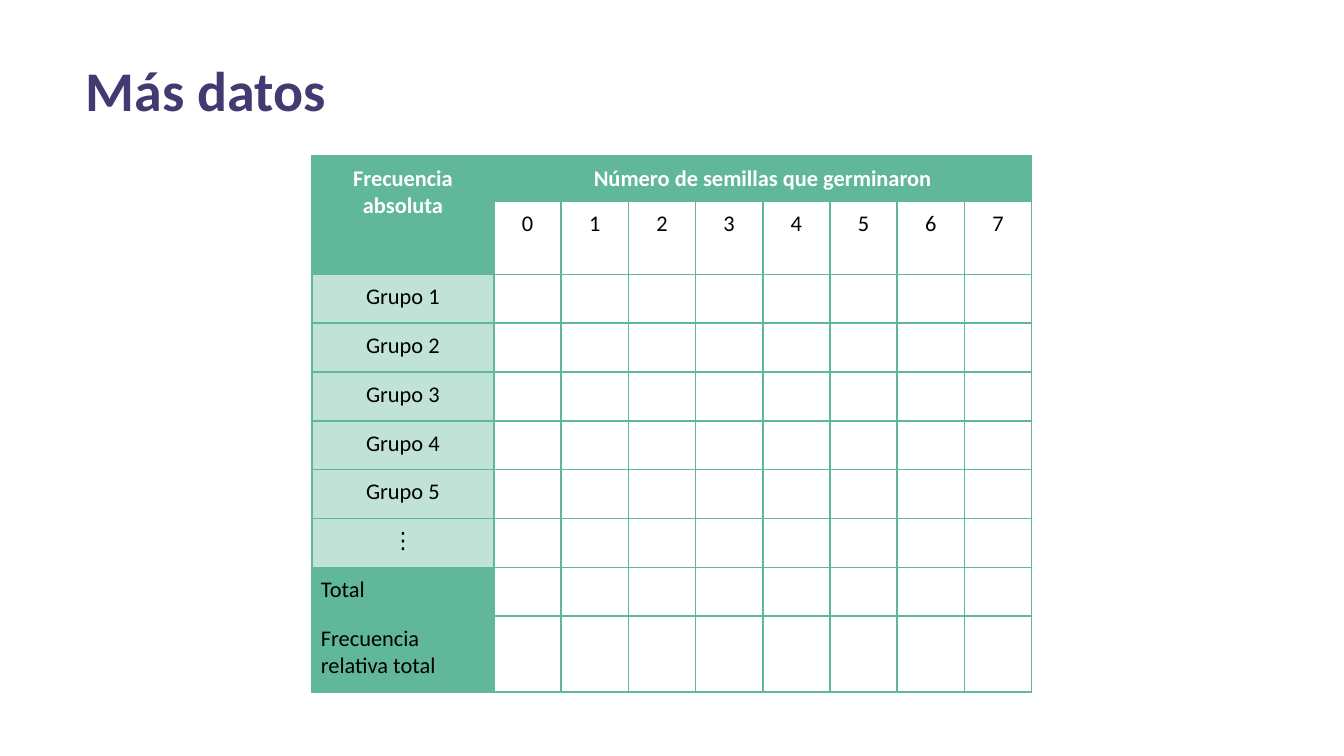
import dataclasses

import lxml.etree
import pptx
import pptx.dml.color
import pptx.enum.text
import pptx.oxml.ns
import pptx.util

EMU_PER_PX = 914400 / 134.4


@dataclasses.dataclass(frozen=True)
class Theme:
    font: str = "Calibri"
    title_size: int = 30
    table_size: int = 12
    title: str = "423B71"
    green: str = "60B799"
    pale_green: str = "C0E2D7"
    white: str = "FFFFFF"
    black: str = "000000"


THEME = Theme()
ALIGN = pptx.enum.text.PP_ALIGN
ANCHOR = pptx.enum.text.MSO_ANCHOR
GROUPS = [f"Grupo {number}" for number in range(1, 6)] + ["⋮"]
SUMMARIES = ["Total", "Frecuencia relativa total"]
SEED_COUNTS = range(8)


def px(length):
    return pptx.util.Emu(round(length * EMU_PER_PX))


def rgb(value):
    return pptx.dml.color.RGBColor.from_string(value)


def format_text(text_frame, size, color, bold=False, align=ALIGN.LEFT):
    for paragraph in text_frame.paragraphs:
        paragraph.alignment = align
        for run in paragraph.runs:
            run.font.name = THEME.font
            run.font.size = pptx.util.Pt(size)
            run.font.bold = bold
            run.font.color.rgb = rgb(color)


def add_title(slide, box, text):
    title = slide.shapes.title
    title.left, title.top, title.width, title.height = map(px, box)
    frame = title.text_frame
    frame.text = text
    frame.word_wrap = True
    frame.auto_size = pptx.enum.text.MSO_AUTO_SIZE.NONE
    frame.vertical_anchor = ANCHOR.MIDDLE
    frame.margin_left = frame.margin_right = px(9)
    frame.margin_top = frame.margin_bottom = px(5)
    format_text(frame, THEME.title_size, THEME.title, bold=True)


def add_borders(cell):
    properties = cell._tc.get_or_add_tcPr()
    qn = pptx.oxml.ns.qn
    for index, side in enumerate(("a:lnL", "a:lnR", "a:lnT", "a:lnB")):
        line = lxml.etree.Element(qn(side), w=str(pptx.util.Pt(1)))
        fill = lxml.etree.SubElement(line, qn("a:solidFill"))
        lxml.etree.SubElement(fill, qn("a:srgbClr"), val=THEME.green)
        properties.insert(index, line)


def prepare_cell(cell):
    cell.margin_left = cell.margin_right = px(9)
    cell.margin_top = cell.margin_bottom = px(9)
    cell.vertical_anchor = ANCHOR.TOP
    cell.fill.background()
    add_borders(cell)
    lxml.etree.SubElement(
        cell.text_frame.paragraphs[0]._p,
        pptx.oxml.ns.qn("a:endParaRPr"),
        sz=str(THEME.table_size * 100),
    )


def write_cell(cell, text, fill=None, color=THEME.black, bold=False, align=ALIGN.CENTER):
    cell.text_frame.text = text
    format_text(cell.text_frame, THEME.table_size, color, bold, align)
    if fill:
        cell.fill.solid()
        cell.fill.fore_color.rgb = rgb(fill)


def add_frequency_table(slide, box):
    left, top, width, height = box
    label_width = 182
    header_heights = [45, 73]
    last_height = 76
    middle_count = len(GROUPS) + len(SUMMARIES) - 1
    middle_height = (height - sum(header_heights) - last_height) / middle_count
    heights = header_heights + [middle_height] * middle_count + [last_height]
    count_width = (width - label_width) / len(SEED_COUNTS)
    widths = [label_width] + [count_width] * len(SEED_COUNTS)

    table = slide.shapes.add_table(len(heights), len(widths), *map(px, box)).table
    table.first_row = table.horz_banding = False
    for column, column_width in zip(table.columns, widths):
        column.width = px(column_width)
    for row, row_height in zip(table.rows, heights):
        row.height = px(row_height)
    for cell in table.iter_cells():
        prepare_cell(cell)

    table.cell(0, 0).merge(table.cell(1, 0))
    table.cell(0, 1).merge(table.cell(0, len(SEED_COUNTS)))
    headings = ["Frecuencia absoluta", "Número de semillas que germinaron"]
    for index, text in enumerate(headings):
        write_cell(table.cell(0, index), text, THEME.green, THEME.white, bold=True)
    for count in SEED_COUNTS:
        write_cell(table.cell(1, count + 1), str(count))
    for row, text in enumerate(GROUPS, start=2):
        write_cell(table.cell(row, 0), text, THEME.pale_green)
    for row, text in enumerate(SUMMARIES, start=2 + len(GROUPS)):
        write_cell(table.cell(row, 0), text, THEME.green, align=ALIGN.LEFT)


def main():
    presentation = pptx.Presentation()
    presentation.slide_width = px(1344)
    presentation.slide_height = px(756)
    slide = presentation.slides.add_slide(presentation.slide_layouts[5])
    slide.background.fill.solid()
    slide.background.fill.fore_color.rgb = rgb(THEME.white)
    add_title(slide, (77, 50, 827, 78), "Más datos")
    add_frequency_table(slide, (312, 156, 720, 536))
    presentation.save("out.pptx")


if __name__ == "__main__":
    main()
